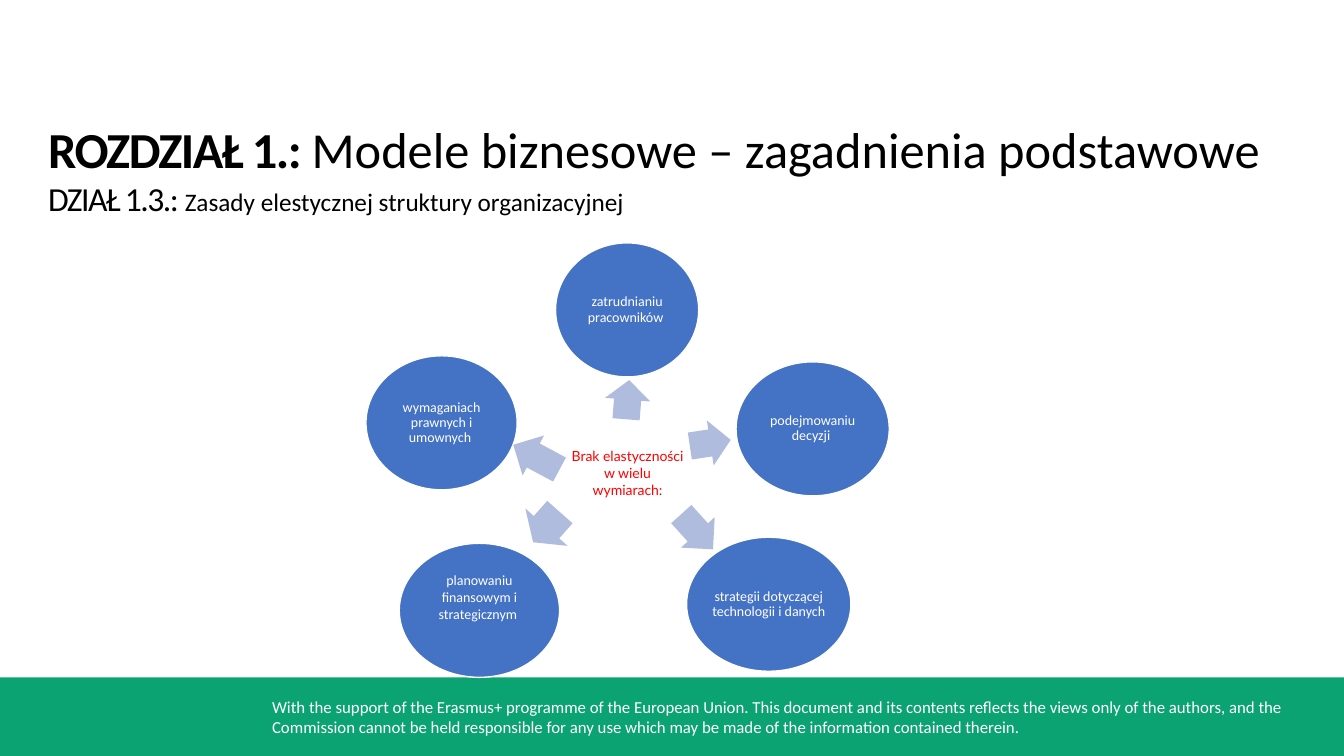
from pptx import Presentation
from pptx.dml.color import RGBColor
from pptx.enum.shapes import MSO_SHAPE
from pptx.enum.text import MSO_ANCHOR, PP_ALIGN
from pptx.util import Inches, Pt

RECT = MSO_SHAPE.RECTANGLE
OVAL = MSO_SHAPE.OVAL
ARROW = MSO_SHAPE.RIGHT_ARROW
LEFT = PP_ALIGN.LEFT
CENTER = PP_ALIGN.CENTER
TOP = MSO_ANCHOR.TOP
MIDDLE = MSO_ANCHOR.MIDDLE


def color(code):
    return RGBColor.from_string(code)


class Board:
    font = "Calibri"
    black = "000000"
    white = "FFFFFF"
    green = "0CA373"
    blue = "4472C4"
    pale = "B0BCDE"
    red = "FF0000"

    def __init__(self, slide):
        self.shapes = slide.shapes

    def shape(self, kind, box, fill, line=None):
        item = self.shapes.add_shape(kind, *map(Inches, box))
        item.shadow.inherit = False
        item.fill.solid()
        item.fill.fore_color.rgb = color(fill)
        if line:
            item.line.color.rgb = color(line)
            item.line.width = Pt(1)
        else:
            item.line.fill.background()
        return item

    def run(self, para, text, size, tone, font=None, bold=False, track=0):
        run = para.add_run()
        run.text = text
        run.font.size = Pt(size)
        run.font.name = font or self.font
        run.font.bold = bold
        run.font.color.rgb = color(tone)
        if track:
            run._r.get_or_add_rPr().set("spc", str(track))

    def text(self, box):
        frame = self.shapes.add_textbox(*map(Inches, box)).text_frame
        frame.word_wrap = True
        frame.vertical_anchor = TOP
        frame.paragraphs[0].alignment = LEFT
        return frame

    def bubble(self, box, text, space=0.9, foot=0.01):
        frame = self.shape(OVAL, box, self.blue, self.white).text_frame
        frame.word_wrap = True
        frame.vertical_anchor = MIDDLE
        frame.margin_left = frame.margin_right = frame.margin_top = Inches(0.01)
        frame.margin_bottom = Inches(foot)
        para = frame.paragraphs[0]
        para.alignment = CENTER
        para.line_spacing = space
        self.run(para, text, 10, self.white)

    def arrow(self, box, turn):
        item = self.shape(ARROW, box, self.pale)
        item.adjustments[0] = 0.6
        item.adjustments[1] = 0.5
        item.rotation = turn

    def footer(self, text):
        self.shape(RECT, (0, 6.72, 13.33, 0.78), self.green)
        para = self.text((2.6, 6.86, 10.42, 0.5)).paragraphs[0]
        self.run(para, text, 12, self.white)

    def title(self, head, topic, part, theme):
        frame = self.text((0.38, 1.12, 12.86, 1.11))
        first = frame.paragraphs[0]
        self.run(first, head, 36, self.black, bold=True, track=-110)
        self.run(first, topic, 36, self.black)
        second = frame.add_paragraph()
        self.run(second, part, 24, self.black, track=-110)
        self.run(second, theme, 18, self.black)

    def center(self, text):
        para = self.text((5.56, 4.39, 1.33, 0.44)).paragraphs[0]
        para.alignment = CENTER
        para.line_spacing = Pt(12.1)
        self.run(para, text, 10, self.red, font="Lato")


BUBBLES = [
    ((5.51, 2.41, 1.42, 1.33), "zatrudnianiu pracowników "),
    ((7.3, 3.59, 1.52, 1.33), "podejmowaniu decyzji "),
    ((6.81, 5.33, 1.63, 1.33), "strategii dotyczącej technologii i danych "),
    ((3.96, 5.39, 1.59, 1.33), "planowaniu finansowym i strategicznym ", 1.0, 0.27),
    ((3.63, 3.53, 1.5, 1.33), "wymaganiach prawnych i umownych "),
]
ARROWS = [
    ((6.84, 4.17, 0.41, 0.45), 351.5),
    ((6.68, 5.05, 0.47, 0.45), 48),
    ((5.22, 4.95, 0.4, 0.56), 131.5),
    ((5.06, 4.31, 0.52, 0.45), 208.2),
    ((6.03, 3.74, 0.39, 0.45), 274.6),
]


def main():
    deck = Presentation()
    deck.slide_width = Inches(13.33)
    deck.slide_height = Inches(7.5)
    board = Board(deck.slides.add_slide(deck.slide_layouts[6]))
    board.footer(
        "With the support of the Erasmus+ programme of the European Union. "
        "This document and its contents reflects the views only of the authors, "
        "and the Commission cannot be held responsible for any use which may be "
        "made of the information contained therein."
    )
    board.title(
        "ROZDZIAŁ 1.: ",
        "Modele biznesowe – zagadnienia podstawowe",
        "DZIAŁ 1.3.: ",
        "Zasady elestycznej struktury organizacyjnej",
    )
    for bubble in BUBBLES:
        board.bubble(*bubble)
    for arrow in ARROWS:
        board.arrow(*arrow)
    board.center("Brak elastyczności w wielu wymiarach:")
    deck.save("out.pptx")


if __name__ == "__main__":
    main()
